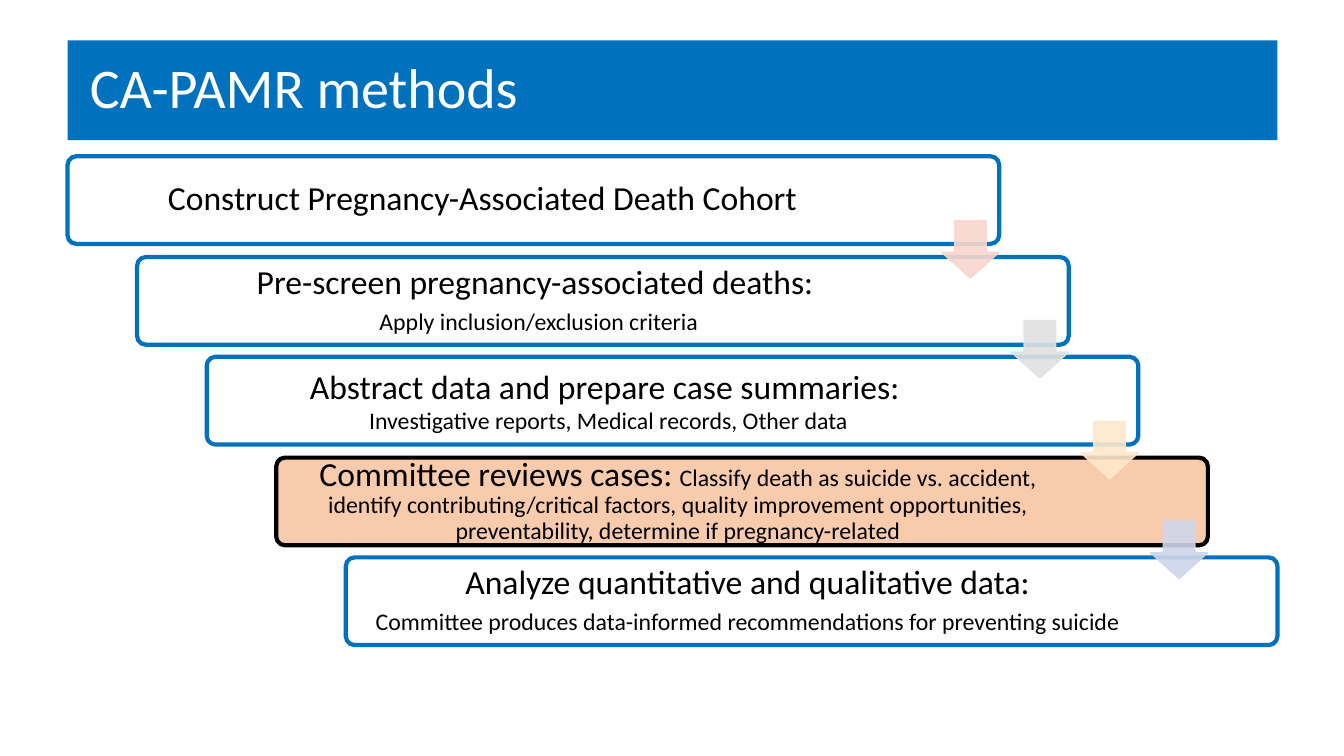
import dataclasses

import pptx
import pptx.dml.color
import pptx.enum.shapes
import pptx.enum.text
import pptx.oxml
import pptx.oxml.ns
import pptx.util

EMU_PER_PX = 9144  # 100 px to the inch
SHAPE = pptx.enum.shapes.MSO_SHAPE
ALIGN = pptx.enum.text.PP_ALIGN
MIDDLE = pptx.enum.text.MSO_ANCHOR.MIDDLE


@dataclasses.dataclass(frozen=True)
class Theme:
    font: str = "Calibri"
    blue: str = "0071BC"
    white: str = "FFFFFF"
    black: str = "000000"
    highlight: str = "F8CBAD"
    arrows: tuple = ("F8D7CE", "E1E1E1", "FFE8CC", "CFD5EA")
    title_size: int = 40
    heading_size: int = 24
    gap_size: int = 23
    detail_size: int = 17
    border: int = 3
    arrow_border: int = 1
    arrow_opacity: int = 90


def px(length):
    return pptx.util.Emu(round(length) * EMU_PER_PX)


def rgb(code):
    return pptx.dml.color.RGBColor.from_string(code)


class SlideBuilder:
    def __init__(self, slide, theme):
        self.slide = slide
        self.theme = theme

    def add_run(self, paragraph, text, size, color):
        run = paragraph.add_run()
        run.text = text
        run.font.name = self.theme.font
        run.font.size = pptx.util.Pt(size)
        run.font.color.rgb = rgb(color)

    def title(self, text, left, top, width, height):
        heading = self.slide.shapes.title
        heading.left, heading.top = px(left), px(top)
        heading.width, heading.height = px(width), px(height)
        heading.fill.solid()
        heading.fill.fore_color.rgb = rgb(self.theme.blue)
        heading.text_frame.vertical_anchor = MIDDLE
        paragraph = heading.text_frame.paragraphs[0]
        paragraph.alignment = ALIGN.LEFT
        paragraph.line_spacing = 0.9
        properties = paragraph._p.get_or_add_pPr()
        properties.set("marL", str(px(12)))
        properties.set("indent", "0")
        self.add_run(paragraph, text, self.theme.title_size, self.theme.white)

    def shape(self, kind, box, adjustments, fill, line, weight):
        item = self.slide.shapes.add_shape(kind, *map(px, box))
        item.shadow.inherit = False
        for index, value in enumerate(adjustments):
            item.adjustments[index] = value
        if fill:
            item.fill.solid()
            item.fill.fore_color.rgb = rgb(fill)
        else:
            item.fill.background()
        item.line.color.rgb = rgb(line)
        item.line.width = pptx.util.Pt(weight)
        return item

    def step_box(self, box, highlighted):
        theme = self.theme
        fill, line = (theme.highlight, theme.black) if highlighted else (None, theme.blue)
        self.shape(SHAPE.ROUNDED_RECTANGLE, box, [0.1], fill, line, theme.border)

    def step_text(self, box, paragraphs, line_spacing, gap):
        """Centre paragraphs, each a list of (text, size) runs, in the box."""
        frame = self.slide.shapes.add_textbox(*map(px, box)).text_frame
        frame.word_wrap = True
        frame.vertical_anchor = MIDDLE
        frame.margin_left = frame.margin_right = px(10)
        frame.margin_top = frame.margin_bottom = px(10)
        for index, runs in enumerate(paragraphs):
            paragraph = frame.add_paragraph() if index else frame.paragraphs[0]
            paragraph.alignment = ALIGN.CENTER
            paragraph.line_spacing = line_spacing
            if index < len(paragraphs) - 1:
                paragraph.space_after = pptx.util.Pt(gap)
            for text, size in runs:
                self.add_run(paragraph, text, size, self.theme.black)

    def arrow(self, box, color):
        """Add a slightly see-through arrow pointing down."""
        item = self.shape(SHAPE.DOWN_ARROW, box, [0.55, 0.45], color, color,
                          self.theme.arrow_border)
        for tint in item._element.spPr.iter(pptx.oxml.ns.qn("a:srgbClr")):
            alpha = pptx.oxml.parse_xml(
                f'<a:alpha {pptx.oxml.ns.nsdecls("a")} '
                f'val="{self.theme.arrow_opacity * 1000}"/>')
            tint.append(alpha)


def main():
    theme = Theme()
    deck = pptx.Presentation()
    deck.slide_width, deck.slide_height = px(1333), px(750)
    builder = SlideBuilder(deck.slides.add_slide(deck.slide_layouts[5]), theme)
    builder.title("CA-PAMR methods", 67, 40, 1200, 99)

    big, gap, small = theme.heading_size, theme.gap_size, theme.detail_size
    # Paragraphs, line spacing, points between paragraphs
    steps = [
        ([[("Construct Pregnancy-Associated Death Cohort", big)]], 0.9, 0),
        ([[("Pre-screen pregnancy-associated deaths: ", big)],
          [("Apply inclusion/exclusion criteria", small)]], 0.9, 6),
        ([[("Abstract data and prepare case summaries: ", big)],
          [("Investigative reports, Medical records, Other data", small)]], 1.0, 0),
        ([[("Committee reviews cases:", big), (" ", gap),
           ("Classify death as suicide vs. accident, identify "
            "contributing/critical factors, quality improvement opportunities, "
            "preventability, determine if pregnancy-related", small)]], 0.9, 0),
        ([[("Analyze quantitative and qualitative data:", big)],
          [("Committee produces data-informed recommendations for "
            "preventing suicide", small)]], 0.9, 6),
    ]
    step_right, step_down = 69, 99.6
    review_step = 3
    for index, (paragraphs, spacing, space_after) in enumerate(steps):
        left, top = 67 + index * step_right, 155 + index * step_down
        text_width = 793 if index else 819
        builder.step_box((left, top, 924, 87), index == review_step)
        builder.step_text((left + 2, top + 2, text_width, 82),
                          paragraphs, spacing, space_after)
    for index, color in enumerate(theme.arrows):
        builder.arrow((934 + index * step_right, 219 + index * 99.3, 57, 57), color)

    deck.save("out.pptx")


if __name__ == "__main__":
    main()
